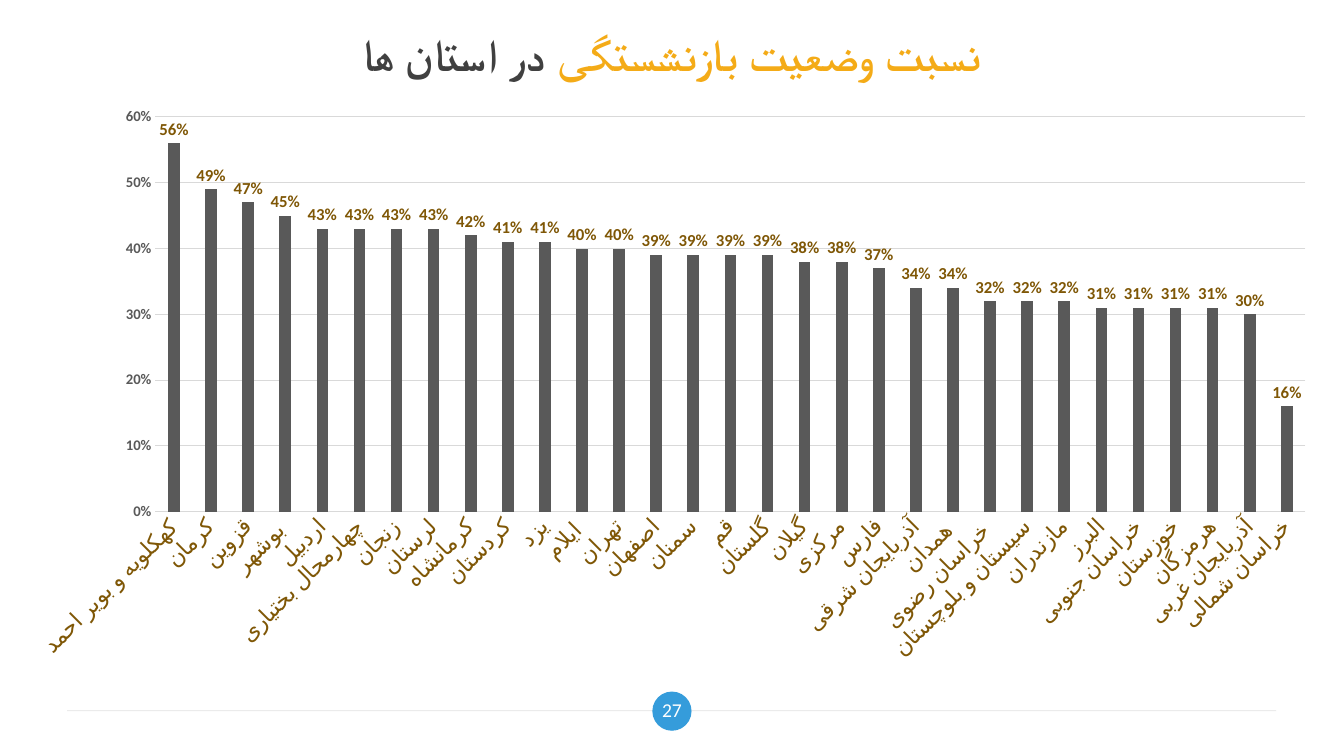
from lxml import etree
from pptx import Presentation
from pptx.chart.data import CategoryChartData
from pptx.dml.color import RGBColor
from pptx.enum.chart import XL_CHART_TYPE as ChartType, XL_LABEL_POSITION as LabelPosition
from pptx.enum.chart import XL_TICK_MARK as TickMark
from pptx.enum.shapes import MSO_CONNECTOR as Connector, MSO_SHAPE as Shape
from pptx.enum.text import MSO_ANCHOR as Anchor, PP_ALIGN as Align
from pptx.oxml import parse_xml
from pptx.oxml.ns import nsdecls, qn
from pptx.util import Pt

AMBER = RGBColor(0xF4, 0xAB, 0x17)
DARK = RGBColor(0x40, 0x40, 0x40)
GRAY = RGBColor(0x59, 0x59, 0x59)
LIGHT = RGBColor(0xD9, 0xD9, 0xD9)
BROWN = RGBColor(0x7F, 0x57, 0x06)
BLUE = RGBColor(0x35, 0x9C, 0xDB)
WHITE = RGBColor(0xFF, 0xFF, 0xFF)

PROVINCES = [
    ("کهکلویه و بویر احمد", 0.56), ("کرمان", 0.49), ("قزوین", 0.47), ("بوشهر ", 0.45),
    ("اردبیل", 0.43), ("چهارمحال بختیاری", 0.43), ("زنجان", 0.43), ("لرستان", 0.43),
    ("کرمانشاه", 0.42), ("کردستان", 0.41), ("یزد", 0.41), ("ایلام ", 0.4),
    ("تهران", 0.4), ("اصفهان", 0.39), ("سمنان", 0.39), ("قم", 0.39),
    ("گلستان", 0.39), ("گیلان", 0.38), ("مرکزی", 0.38), ("فارس", 0.37),
    ("آذربایجان شرقی", 0.34), ("همدان ", 0.34), ("خراسان رضوی ", 0.32),
    ("سیستان و بلوچستان", 0.32), ("مازندران", 0.32), ("البرز", 0.31),
    ("خراسان جنوبی", 0.31), ("خوزستان", 0.31), ("هرمزگان", 0.31),
    ("آذربایجان غربی", 0.3), ("خراسان شمالی", 0.16),
]


def style_font(font, size, color, bold=False, name="Calibri"):
    font.name = name
    font.size = Pt(size)
    font.bold = bold
    font.color.rgb = color


def prepare_frame(frame):
    frame.word_wrap = True
    frame.vertical_anchor = Anchor.MIDDLE
    frame.margin_left = frame.margin_right = Pt(9.6)
    frame.margin_top = frame.margin_bottom = Pt(4.8)
    paragraph = frame.paragraphs[0]
    paragraph.alignment = Align.CENTER
    return paragraph


presentation = Presentation()
presentation.slide_width = Pt(960)
presentation.slide_height = Pt(540)
slide = presentation.slides.add_slide(presentation.slide_layouts[5])
shapes = slide.shapes

# Footer rule
rule = shapes.add_connector(Connector.STRAIGHT, Pt(48), Pt(507.6), Pt(911.5), Pt(507.6))
rule.line.color.rgb = LIGHT
rule.line.width = Pt(0.75)
rule_color = rule.line._ln.find(".//" + qn("a:srgbClr"))
etree.SubElement(rule_color, qn("a:alpha"), val="50000")
etree.SubElement(rule._element.spPr, qn("a:effectLst"))

# Page number
badge = shapes.add_shape(Shape.OVAL, Pt(466), Pt(494), Pt(28), Pt(28))
badge.shadow.inherit = False
badge.fill.solid()
badge.fill.fore_color.rgb = BLUE
badge.line.fill.background()
number_box = shapes.add_textbox(Pt(460), Pt(492), Pt(40), Pt(30))
number = prepare_frame(number_box.text_frame).add_run()
number.text = "27"
style_font(number.font, 14, WHITE)

# Chart of provinces
chart_data = CategoryChartData(number_format="0%")
chart_data.categories = [name for name, share in PROVINCES]
chart_data.add_series("Series 1", [share for name, share in PROVINCES])
chart = shapes.add_chart(ChartType.COLUMN_CLUSTERED, Pt(9.4), Pt(68.4), Pt(941), Pt(411),
                         chart_data).chart
chart.has_legend = False
chart.has_title = False
style_font(chart.font, 10, RGBColor(0, 0, 0))

plot = chart.plots[0]
plot.gap_width = 219
plot.overlap = -27
plot.vary_by_categories = False
series = plot.series[0]
series.format.fill.solid()
series.format.fill.fore_color.rgb = GRAY
labels = series.data_labels
labels.show_value = True
labels.number_format = "0%"
labels.number_format_is_linked = False
labels.position = LabelPosition.OUTSIDE_END
style_font(labels.font, 12, BROWN, bold=True)

# Plot area position, as fractions of the chart
plot_area = chart._chartSpace.chart.plotArea
for layout in plot_area.findall(qn("c:layout")):
    plot_area.remove(layout)
fractions = {"x": 0.108, "y": 0.037, "w": 0.873, "h": 0.686}
plot_area.insert(0, parse_xml(
    f'<c:layout {nsdecls("c")}><c:manualLayout><c:layoutTarget val="inner"/>'
    '<c:xMode val="edge"/><c:yMode val="edge"/>'
    + "".join(f'<c:{key} val="{value}"/>' for key, value in fractions.items())
    + "</c:manualLayout></c:layout>"))

# Axes
province_axis, share_axis = chart.category_axis, chart.value_axis
for axis in (province_axis, share_axis):
    axis.major_tick_mark = axis.minor_tick_mark = TickMark.NONE
style_font(province_axis.tick_labels.font, 16, BROWN)
province_axis._element.txPr.bodyPr.set("rot", "-2700000")
style_font(share_axis.tick_labels.font, 10.5, GRAY, bold=True)
share_axis.tick_labels.number_format = "0%"
share_axis.tick_labels.number_format_is_linked = False
share_axis.minimum_scale = 0
share_axis.maximum_scale = 0.6
share_axis.major_unit = 0.1
share_axis.format.line.fill.background()
for line in (province_axis.format.line, share_axis.major_gridlines.format.line):
    line.color.rgb = LIGHT
    line.width = Pt(0.75)

# Title
title = shapes.title
title.left, title.top, title.width, title.height = Pt(48), Pt(10), Pt(864), Pt(56)
heading = prepare_frame(title.text_frame)
heading._p.get_or_add_pPr().set("rtl", "1")
for text, color in (("نسبت وضعیت بازنشستگی ", AMBER), ("در استان ها", DARK)):
    run = heading.add_run()
    run.text = text
    style_font(run.font, 32, color, bold=True, name="Open Sans")
    etree.SubElement(run._r.rPr, qn("a:cs"), typeface="Open Sans")

presentation.save("out.pptx")
